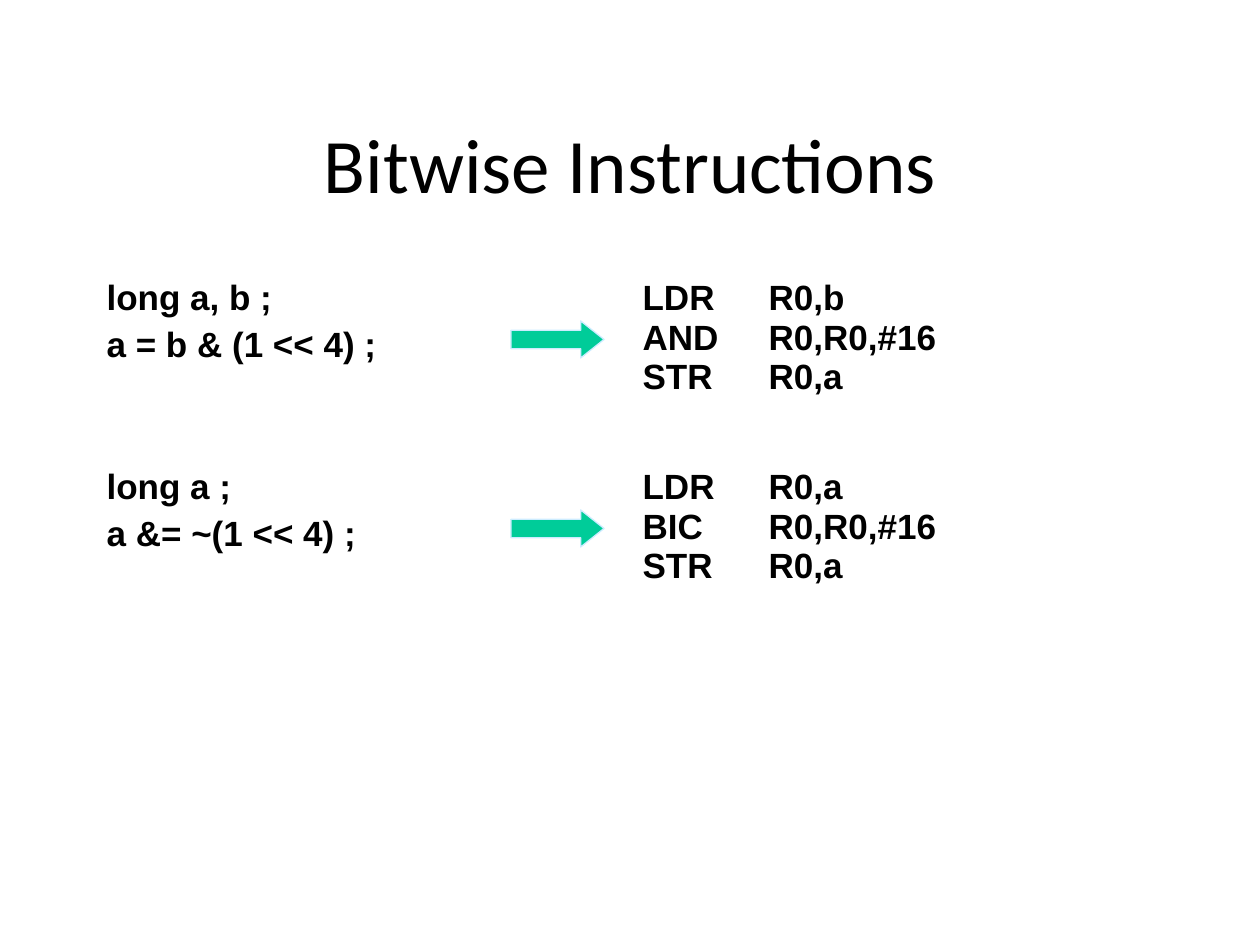
from dataclasses import dataclass

from lxml.etree import SubElement
from pptx import Presentation
from pptx.dml.color import RGBColor
from pptx.enum.shapes import MSO_SHAPE
from pptx.enum.text import MSO_ANCHOR, PP_ALIGN
from pptx.oxml.ns import qn
from pptx.util import Emu, Pt

TITLE = "Bitwise Instructions"
EXAMPLES = [
    {
        "source": ["long a, b ;", "a = b & (1 << 4) ;"],
        "assembly": ["LDR\tR0,b", "AND\tR0,R0,#16", "STR\tR0,a"],
    },
    {
        "source": ["long a ;", "a &= ~(1 << 4) ;"],
        "assembly": ["LDR\tR0,a", "BIC\tR0,R0,#16", "STR\tR0,a"],
    },
]

SLIDE_SIZE = (1260, 945)
TITLE_BOX = (95, 84, 1071, 158)
TABLE_LEFT, TABLE_TOP = 94, 273
COLUMN_WIDTHS = (536, 535)
ROW_COUNT, ROW_HEIGHT = 3, 189
OPERAND_TAB = 126
ARROW_LEFT, ARROW_OFFSET = 511, 48
ARROW_SIZE = (93, 37)


@dataclass(frozen=True)
class Theme:
    text: RGBColor = RGBColor(0x00, 0x00, 0x00)
    arrow_fill: RGBColor = RGBColor(0x00, 0xCC, 0x99)
    arrow_line: RGBColor = RGBColor(0xCC, 0xEC, 0xFF)
    title_font: str = "Calibri"
    code_font: str = "Arial"
    title_size: Pt = Pt(44)
    code_size: Pt = Pt(20)
    code_gap: Pt = Pt(4.5)
    arrow_line_width: Pt = Pt(0.75)


THEME = Theme()


def px(length):
    return Emu(round(length * 914400 / 126))


def add_text(paragraph, text, font_name, size, bold=False):
    run = paragraph.add_run()
    run.text = text
    run.font.name = font_name
    run.font.size = size
    run.font.bold = bold
    run.font.color.rgb = THEME.text


def add_code(paragraph, text):
    add_text(paragraph, text, THEME.code_font, THEME.code_size, bold=True)


def add_tab_stop(paragraph, position):
    properties = paragraph._p.get_or_add_pPr()
    tab_list = SubElement(properties, qn("a:tabLst"))
    SubElement(tab_list, qn("a:tab"), pos=str(px(position)), algn="l")


def add_title(slide):
    frame = slide.shapes.add_textbox(*map(px, TITLE_BOX)).text_frame
    frame.word_wrap = True
    frame.vertical_anchor = MSO_ANCHOR.MIDDLE
    paragraph = frame.paragraphs[0]
    paragraph.alignment = PP_ALIGN.CENTER
    add_text(paragraph, TITLE, THEME.title_font, THEME.title_size)


def fill_source(cell, lines):
    frame = cell.text_frame
    for index, line in enumerate(lines):
        paragraph = frame.add_paragraph() if index else frame.paragraphs[0]
        if index:
            paragraph.space_before = THEME.code_gap
        add_code(paragraph, line)


def fill_assembly(cell, lines):
    paragraph = cell.text_frame.paragraphs[0]
    add_tab_stop(paragraph, OPERAND_TAB)
    for index, line in enumerate(lines):
        if index:
            paragraph.add_line_break()
        add_code(paragraph, line)


def add_code_table(slide):
    table = slide.shapes.add_table(
        ROW_COUNT, len(COLUMN_WIDTHS), px(TABLE_LEFT), px(TABLE_TOP),
        px(sum(COLUMN_WIDTHS)), px(ROW_COUNT * ROW_HEIGHT),
    ).table
    table.first_row = False
    table.horz_banding = False
    for column, width in zip(table.columns, COLUMN_WIDTHS):
        column.width = px(width)
    for row in table.rows:
        row.height = px(ROW_HEIGHT)
    for cell in table.iter_cells():
        cell.fill.background()
    for index, example in enumerate(EXAMPLES):
        fill_source(table.cell(index, 0), example["source"])
        fill_assembly(table.cell(index, 1), example["assembly"])


def add_arrow(slide, row):
    top = TABLE_TOP + row * ROW_HEIGHT + ARROW_OFFSET
    arrow = slide.shapes.add_shape(
        MSO_SHAPE.RIGHT_ARROW, px(ARROW_LEFT), px(top), *map(px, ARROW_SIZE)
    )
    arrow.adjustments[0] = 0.5
    arrow.adjustments[1] = 0.63
    arrow.shadow.inherit = False
    arrow.fill.solid()
    arrow.fill.fore_color.rgb = THEME.arrow_fill
    arrow.line.color.rgb = THEME.arrow_line
    arrow.line.width = THEME.arrow_line_width


def main():
    presentation = Presentation()
    presentation.slide_width, presentation.slide_height = map(px, SLIDE_SIZE)
    slide = presentation.slides.add_slide(presentation.slide_layouts[6])
    add_title(slide)
    add_code_table(slide)
    for row in range(len(EXAMPLES)):
        add_arrow(slide, row)
    presentation.save("out.pptx")


if __name__ == "__main__":
    main()
